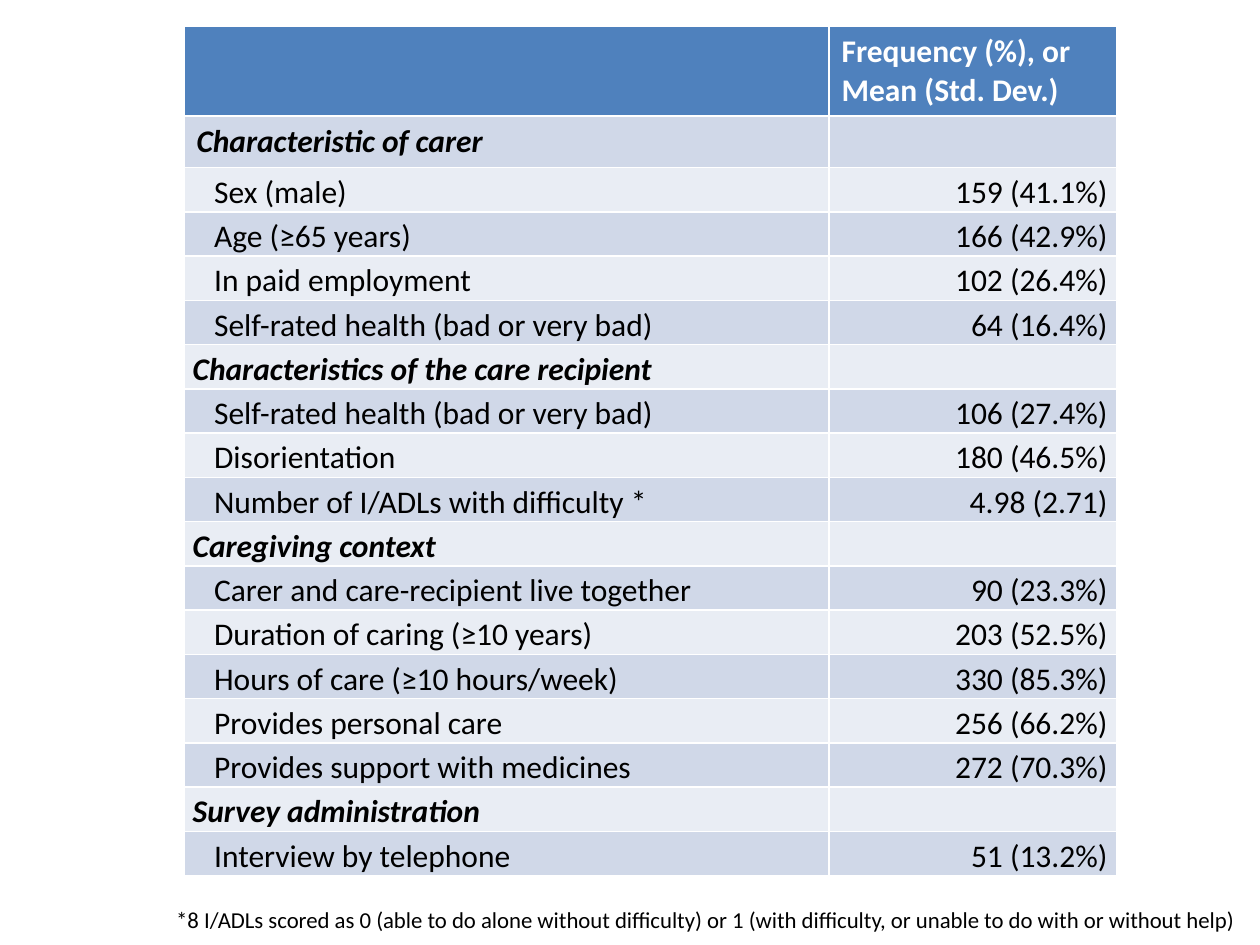
"""Build a slide with a table of carer, care recipient and caregiving characteristics."""
from pptx import Presentation
from pptx.dml.color import RGBColor
from pptx.enum.text import MSO_AUTO_SIZE, MSO_ANCHOR, PP_ALIGN
from pptx.util import Inches, Pt

HEADER_BLUE = RGBColor(0x4F, 0x81, 0xBD)
DARK_BAND = RGBColor(0xD0, 0xD8, 0xE8)
LIGHT_BAND = RGBColor(0xE9, 0xED, 0xF4)
WHITE = RGBColor(0xFF, 0xFF, 0xFF)
BLACK = RGBColor(0, 0, 0)

HEADING = "Frequency (%), or\nMean (Std. Dev.)"
CHARACTERISTICS = [
    ("Characteristic of carer", ""),
    ("Sex (male)", "159 (41.1%)"),
    ("Age (≥65 years)", "166 (42.9%)"),
    ("In paid employment", "102 (26.4%)"),
    ("Self-rated health (bad or very bad)", "64 (16.4%)"),
    ("Characteristics of the care recipient", ""),
    ("Self-rated health (bad or very bad)", "106 (27.4%)"),
    ("Disorientation", "180 (46.5%)"),
    ("Number of I/ADLs with difficulty *", "4.98 (2.71)"),
    ("Caregiving context", ""),
    ("Carer and care-recipient live together", "90 (23.3%)"),
    ("Duration of caring (≥10 years)", "203 (52.5%)"),
    ("Hours of care (≥10 hours/week)", "330 (85.3%)"),
    ("Provides personal care", "256 (66.2%)"),
    ("Provides support with medicines", "272 (70.3%)"),
    ("Survey administration", ""),
    ("Interview by telephone", "51 (13.2%)"),
]
FOOTNOTE = (
    "*8 I/ADLs scored as 0 (able to do alone without difficulty) "
    "or 1 (with difficulty, or unable to do with or without help)"
)


def format_text(frame, size, color, bold=False, italic=False):
    for paragraph in frame.paragraphs:
        for run in paragraph.runs:
            run.font.name = "Calibri"
            run.font.size = Pt(size)
            run.font.color.rgb = color
            run.font.bold = bold
            run.font.italic = italic


def fill_cell(cell, color):
    cell.fill.solid()
    cell.fill.fore_color.rgb = color


presentation = Presentation()
presentation.slide_width = Inches(10)
presentation.slide_height = Inches(7.5)
slide = presentation.slides.add_slide(presentation.slide_layouts[6])

row_heights = [0.7, 0.41] + [0.35] * (len(CHARACTERISTICS) - 1)
table = slide.shapes.add_table(
    len(row_heights), 2, Inches(1.46), Inches(0.21), Inches(7.4), Inches(sum(row_heights))
).table
table.columns[0].width = Inches(5.12)
table.columns[1].width = Inches(2.28)
for row, height in zip(table.rows, row_heights):
    row.height = Inches(height)

for cell in table.rows[0].cells:
    fill_cell(cell, HEADER_BLUE)
heading = table.cell(0, 1)
heading.text_frame.text = HEADING
format_text(heading.text_frame, 18, WHITE, bold=True)

for number, (label, value) in enumerate(CHARACTERISTICS, start=1):
    is_section = not value
    for column, text in enumerate((label, value)):
        cell = table.cell(number, column)
        fill_cell(cell, DARK_BAND if number % 2 else LIGHT_BAND)
        cell.text_frame.text = text
        format_text(cell.text_frame, 18, BLACK, bold=is_section, italic=is_section)
        if number > 1:
            cell.margin_left = cell.margin_right = Inches(0.07)
            cell.margin_top = cell.margin_bottom = 0
            cell.text_frame.paragraphs[0].line_spacing = 1.15
        cell.vertical_anchor = MSO_ANCHOR.TOP
    if not is_section:
        table.cell(number, 0).margin_left = Inches(0.24)
        table.cell(number, 1).text_frame.paragraphs[0].alignment = PP_ALIGN.RIGHT

footnote = slide.shapes.add_textbox(Inches(1.3), Inches(7.14), Inches(11.22), Inches(0.32))
footnote.text_frame.word_wrap = True
footnote.text_frame.auto_size = MSO_AUTO_SIZE.SHAPE_TO_FIT_TEXT
footnote.text_frame.text = FOOTNOTE
format_text(footnote.text_frame, 13, BLACK)

presentation.save("out.pptx")
